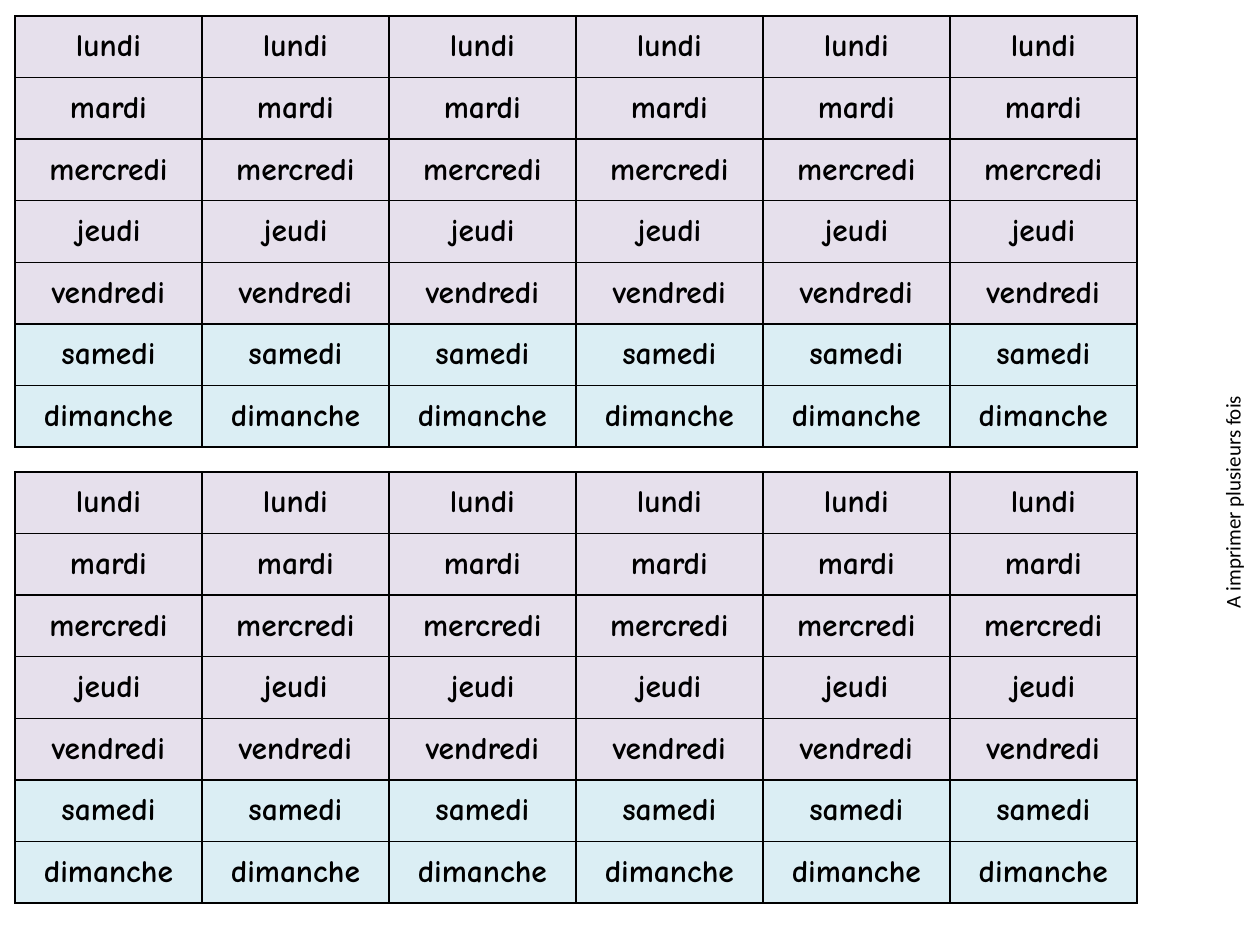
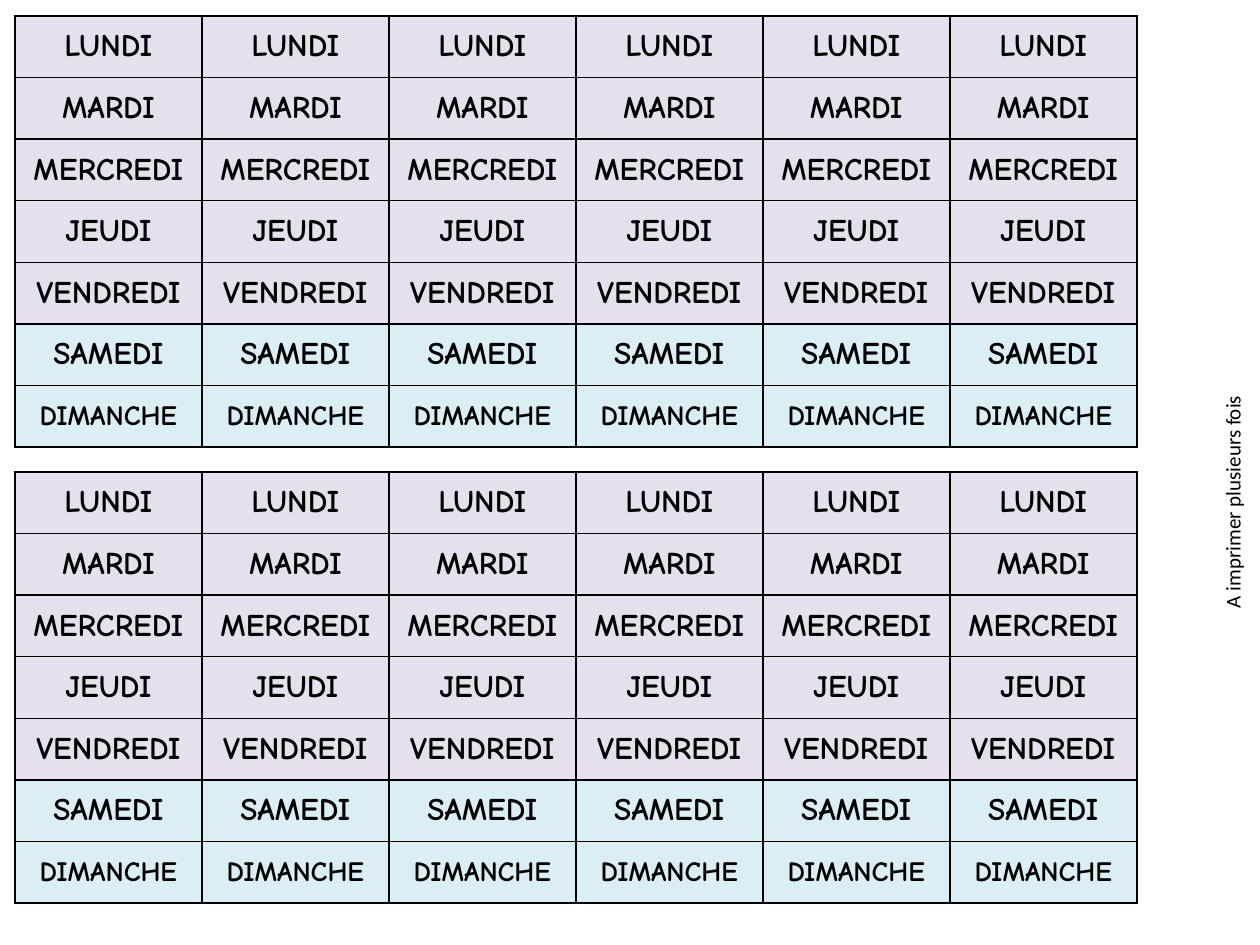
from lxml import etree
from pptx import Presentation
from pptx import util as u
from pptx.dml.color import RGBColor
from pptx.enum import text
from pptx.oxml.ns import qn

PX_PER_INCH = 126
BLACK = RGBColor(0x00, 0x00, 0x00)
WEEKDAY_FILL = RGBColor(0xE6, 0xE0, 0xEC)
WEEKEND_FILL = RGBColor(0xDB, 0xEE, 0xF4)
LABEL_FONT = "Comic Neue"
NOTE_FONT = "Calibri"

DAYS = ["lundi", "mardi", "mercredi", "jeudi", "vendredi", "samedi", "dimanche"]
WEEKEND = DAYS[5:]
WEEKS = 6
WEEK_GRIDS = [(15, 16, 1122, 431), (15, 472, 1122, 431)]
NOTE_BOX = (1007, 590, 451, 38)
BLANK_LAYOUT = 6


def px(length):
    return u.Emu(round(length * u.Inches(1) / PX_PER_INCH))


def style_font(font, name, size, bold=False):
    font.name = name
    font.size = u.Pt(size)
    font.bold = bold
    font.color.rgb = BLACK


def draw_borders(cell):
    """Give the cell a 1 pt black line on all four sides."""
    properties = cell._tc.get_or_add_tcPr()
    for position, side in enumerate(("lnL", "lnR", "lnT", "lnB")):
        line = etree.Element(qn(f"a:{side}"), w=str(u.Pt(1)))
        fill = etree.SubElement(line, qn("a:solidFill"))
        etree.SubElement(fill, qn("a:srgbClr"), val=str(BLACK))
        properties.insert(position, line)


def fill_label(cell, label, size, color):
    cell.fill.solid()
    cell.fill.fore_color.rgb = color
    draw_borders(cell)
    cell.vertical_anchor = text.MSO_ANCHOR.MIDDLE
    para = cell.text_frame.paragraphs[0]
    para.text = label
    para.alignment = text.PP_ALIGN.CENTER
    style_font(para.runs[0].font, LABEL_FONT, size, bold=True)


def add_week_grid(page, box, write_day, sunday_size):
    """Add one row of identical labels for each day of the week."""
    left, top, width, height = box
    table = page.shapes.add_table(
        len(DAYS), WEEKS, px(left), px(top), px(width), px(height)).table
    table.first_row = table.horz_banding = False
    for column in table.columns:
        column.width = px(width / WEEKS)
    for row, day in zip(table.rows, DAYS):
        row.height = px(height / len(DAYS))
        color = WEEKEND_FILL if day in WEEKEND else WEEKDAY_FILL
        size = sunday_size if day == "dimanche" else 18
        for cell in row.cells:
            fill_label(cell, write_day(day), size, color)


def add_print_note(page, box):
    note = page.shapes.add_textbox(*map(px, box))
    note.rotation = 270
    frame = note.text_frame
    frame.word_wrap = True
    frame.auto_size = text.MSO_AUTO_SIZE.SHAPE_TO_FIT_TEXT
    para = frame.paragraphs[0]
    para.text = "A imprimer plusieurs fois"
    para.alignment = text.PP_ALIGN.RIGHT
    style_font(para.runs[0].font, NOTE_FONT, 12)


def add_label_sheet(deck, write_day, sunday_size):
    page = deck.slides.add_slide(deck.slide_layouts[BLANK_LAYOUT])
    for box in WEEK_GRIDS:
        add_week_grid(page, box, write_day, sunday_size)
    add_print_note(page, NOTE_BOX)


def main():
    deck = Presentation()
    deck.slide_width, deck.slide_height = u.Inches(10), u.Inches(7.5)
    add_label_sheet(deck, str.lower, sunday_size=18)
    add_label_sheet(deck, str.upper, sunday_size=16)
    deck.save("out.pptx")


if __name__ == "__main__":
    main()
